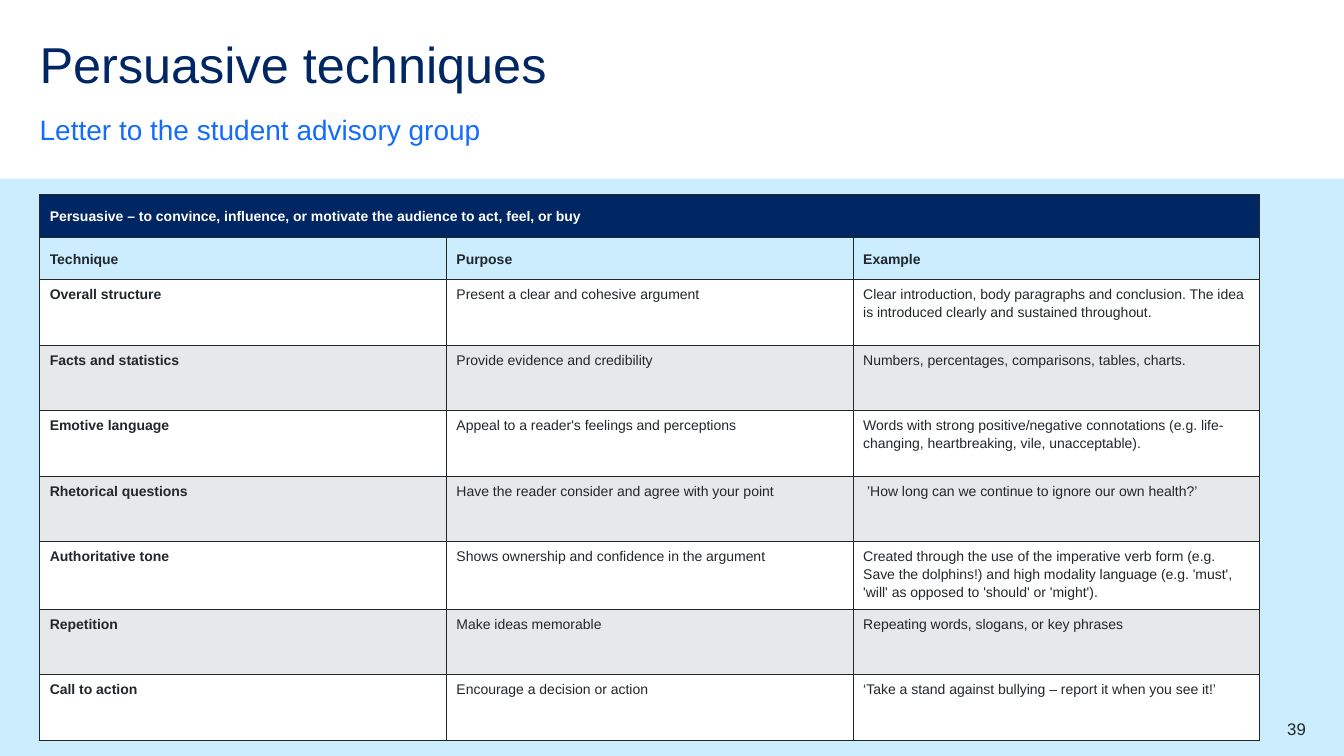
from lxml import etree
from pptx import Presentation
from pptx import util as u
from pptx.dml.color import RGBColor
from pptx.enum import shapes, text
from pptx.oxml import ns

NAVY = RGBColor(0x00, 0x26, 0x64)
BLUE = RGBColor(0x14, 0x6C, 0xFD)
PALE_BLUE = RGBColor(0xCB, 0xED, 0xFD)
GREY = RGBColor(0xE7, 0xE8, 0xEA)
WHITE = RGBColor(0xFF, 0xFF, 0xFF)
INK = RGBColor(0x22, 0x27, 0x2B)

FONT = "Arial"
LEFT = 1
COLUMN_WIDTH = 10.25
HEADING_HEIGHT = 1.07
ROW_HEIGHT = 1.65

TABLE_TITLE = "Persuasive – to convince, influence, or motivate the audience to act, feel, or buy"
HEADINGS = ("Technique", "Purpose", "Example")
TECHNIQUES = [
    ("Overall structure", "Present a clear and cohesive argument",
     "Clear introduction, body paragraphs and conclusion. "
     "The idea is introduced clearly and sustained throughout."),
    ("Facts and statistics", "Provide evidence and credibility",
     "Numbers, percentages, comparisons, tables, charts."),
    ("Emotive language", "Appeal to a reader's feelings and perceptions",
     "Words with strong positive/negative connotations "
     "(e.g. life-changing, heartbreaking, vile, unacceptable)."),
    ("Rhetorical questions", "Have the reader consider and agree with your point",
     " ’How long can we continue to ignore our own health?’"),
    ("Authoritative tone", "Shows ownership and confidence in the argument",
     "Created through the use of the imperative verb form (e.g. Save the dolphins!) "
     "and high modality language (e.g. 'must', 'will' as opposed to 'should' or 'might')."),
    ("Repetition", "Make ideas memorable", "Repeating words, slogans, or key phrases"),
    ("Call to action", "Encourage a decision or action",
     "‘Take a stand against bullying – report it when you see it!’"),
]


def add_run(paragraph, words, size, color, bold=False):
    run = paragraph.add_run()
    run.text = words
    run.font.name = FONT
    run.font.size = u.Pt(size)
    run.font.bold = bold
    run.font.color.rgb = color


def add_text(slide, left, top, width, height, words, size, color,
             anchor=text.MSO_ANCHOR.TOP, align=text.PP_ALIGN.LEFT, spacing=1.0, after=0):
    box = slide.shapes.add_textbox(u.Cm(left), u.Cm(top), u.Cm(width), u.Cm(height))
    frame = box.text_frame
    frame.word_wrap = True
    frame.vertical_anchor = anchor
    frame.margin_left = frame.margin_right = frame.margin_top = frame.margin_bottom = 0
    paragraph = frame.paragraphs[0]
    paragraph.alignment = align
    paragraph.line_spacing = spacing
    paragraph.space_after = u.Pt(after)
    add_run(paragraph, words, size, color)


def add_band(slide, top, width, height):
    band = slide.shapes.add_shape(shapes.MSO_SHAPE.RECTANGLE,
                                  0, u.Cm(top), width, u.Cm(height))
    band.shadow.inherit = False
    band.fill.solid()
    band.fill.fore_color.rgb = PALE_BLUE
    band.line.fill.background()


def set_borders(cell):
    properties = cell._tc.get_or_add_tcPr()
    for side in ("a:lnL", "a:lnR", "a:lnT", "a:lnB"):
        line = etree.SubElement(properties, ns.qn(side), w=str(u.Pt(1)))
        fill = etree.SubElement(line, ns.qn("a:solidFill"))
        etree.SubElement(fill, ns.qn("a:srgbClr"), val=str(INK))


def style_cell(cell, fill):
    set_borders(cell)
    cell.fill.solid()
    cell.fill.fore_color.rgb = fill


def write_cell(cell, words, color=INK, bold=False, anchor=text.MSO_ANCHOR.TOP):
    cell.vertical_anchor = anchor
    paragraph = cell.text_frame.paragraphs[0]
    paragraph.line_spacing = 1.14
    paragraph.space_after = u.Pt(6)
    add_run(paragraph, words, 10, color, bold)


def add_techniques_table(slide, top):
    heights = [HEADING_HEIGHT] * 2 + [ROW_HEIGHT] * len(TECHNIQUES)
    columns = len(HEADINGS)
    table = slide.shapes.add_table(len(heights), columns, u.Cm(LEFT), u.Cm(top),
                                   u.Cm(columns * COLUMN_WIDTH), u.Cm(sum(heights))).table
    table.first_row = table.horz_banding = False
    for column in table.columns:
        column.width = u.Cm(COLUMN_WIDTH)
    for row, height in zip(table.rows, heights):
        row.height = u.Cm(height)

    # Title row across all columns
    middle = text.MSO_ANCHOR.MIDDLE
    table.cell(0, 0).merge(table.cell(0, columns - 1))
    for cell in table.rows[0].cells:
        style_cell(cell, NAVY)
    write_cell(table.cell(0, 0), TABLE_TITLE, WHITE, True, middle)

    # Column headings
    for cell, heading in zip(table.rows[1].cells, HEADINGS):
        style_cell(cell, PALE_BLUE)
        write_cell(cell, heading, bold=True, anchor=middle)

    # Techniques on alternating fills
    for index, technique in enumerate(TECHNIQUES):
        for column, words in enumerate(technique):
            cell = table.cell(index + 2, column)
            style_cell(cell, GREY if index % 2 else WHITE)
            write_cell(cell, words, bold=column == 0)


def main():
    presentation = Presentation()
    presentation.slide_width = u.Cm(33.87)
    presentation.slide_height = u.Cm(19.05)
    slide = presentation.slides.add_slide(presentation.slide_layouts[6])

    # Background band
    add_band(slide, 4.5, presentation.slide_width, 14.55)

    # Title, subtitle and page number
    add_text(slide, LEFT, 1, 28.5, 1.45, "Persuasive techniques", 36, NAVY, spacing=0.9)
    add_text(slide, LEFT, 2.82, 28, 0.86, "Letter to the student advisory group", 20, BLUE,
             anchor=text.MSO_ANCHOR.BOTTOM, spacing=1.5, after=12)
    add_text(slide, 30.91, 18.11, 2, 0.5, "39", 12, INK, align=text.PP_ALIGN.RIGHT)

    # Table of techniques
    add_techniques_table(slide, 4.91)

    presentation.save("out.pptx")


if __name__ == "__main__":
    main()
